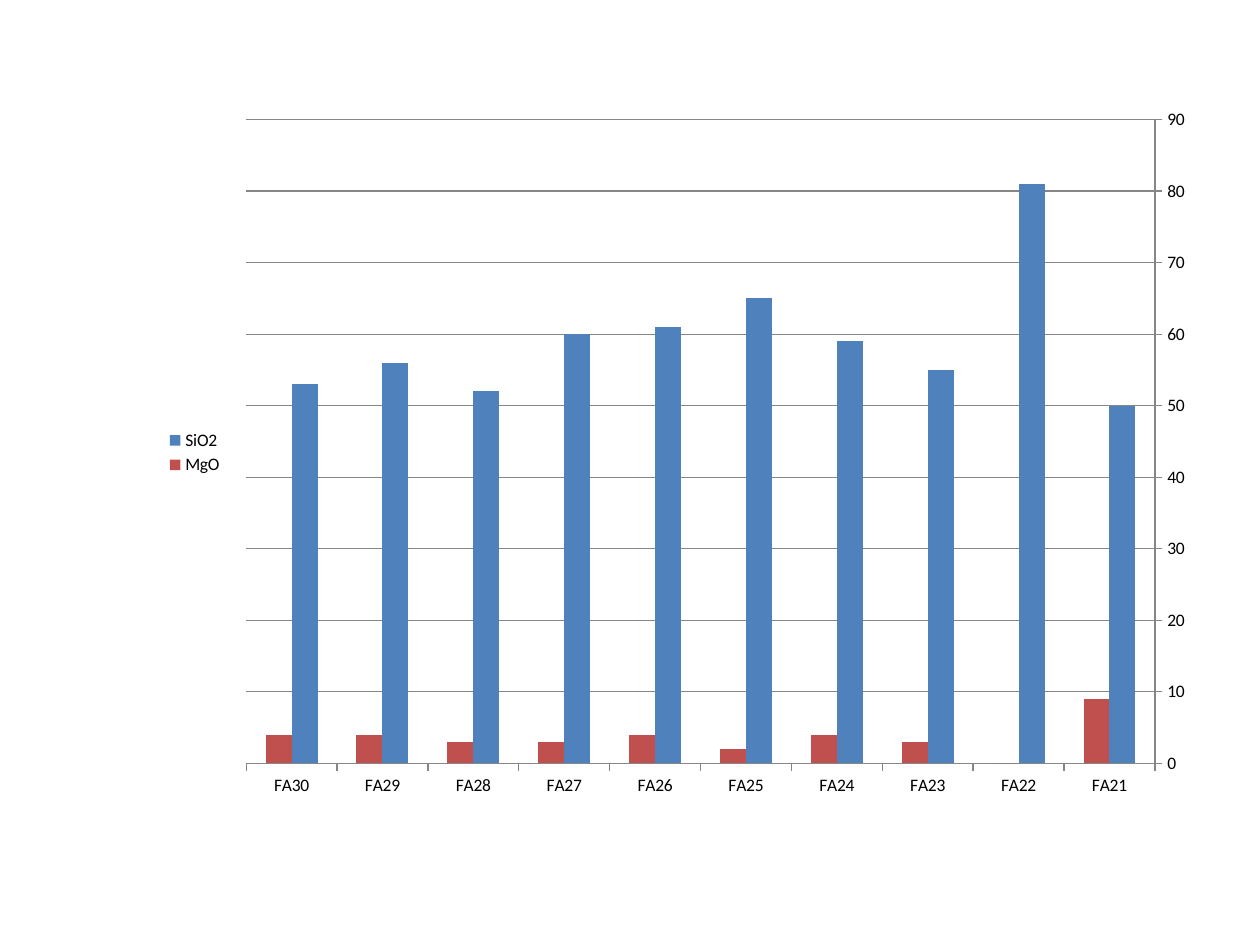
from pptx import Presentation
from pptx import util as u
from pptx.chart.data import CategoryChartData
from pptx.dml.color import RGBColor
from pptx.enum import chart as charts

BLACK = RGBColor(0x00, 0x00, 0x00)
GRAY = RGBColor(0x86, 0x86, 0x86)
BLUE = RGBColor(0x4F, 0x81, 0xBD)
RED = RGBColor(0xC0, 0x50, 0x4D)
WIDTH, HEIGHT = u.Inches(10), u.Inches(7.5)

SAMPLES = [f"FA{number}" for number in range(21, 31)]
OXIDES = {
    "SiO2": (BLUE, [50, 81, 55, 59, 65, 61, 60, 52, 56, 53]),
    "MgO": (RED, [9, 0, 3, 4, 2, 4, 3, 3, 4, 4]),
}


def style_line(line):
    line.color.rgb = GRAY
    line.width = u.Pt(0.75)


def style_axis(axis):
    axis.major_tick_mark = charts.XL_TICK_MARK.OUTSIDE
    axis.minor_tick_mark = charts.XL_TICK_MARK.NONE
    style_line(axis.format.line)


def add_oxide_chart(page, box):
    """Place the column chart in box: left, top, width, height."""
    data = CategoryChartData()
    data.categories = SAMPLES
    for name, (_, values) in OXIDES.items():
        data.add_series(name, values)
    chart = page.shapes.add_chart(
        charts.XL_CHART_TYPE.COLUMN_CLUSTERED, *box, data).chart
    chart.has_title = False
    chart.font.name = "Calibri"
    chart.font.size = u.Pt(10)
    chart.font.color.rgb = BLACK

    # Columns
    plot = chart.plots[0]
    plot.gap_width = 150
    plot.overlap = 0
    plot.vary_by_categories = False
    for series, (color, _) in zip(plot.series, OXIDES.values()):
        series.format.fill.solid()
        series.format.fill.fore_color.rgb = color

    # Axes: samples run from right to left
    style_axis(chart.category_axis)
    chart.category_axis.reverse_order = True
    scale = chart.value_axis
    style_axis(scale)
    scale.minimum_scale, scale.maximum_scale = 0, 90
    scale.major_unit = 10
    scale.has_major_gridlines = True
    style_line(scale.major_gridlines.format.line)

    # Legend
    chart.has_legend = True
    chart.legend.position = charts.XL_LEGEND_POSITION.LEFT
    chart.legend.include_in_layout = False


def main():
    deck = Presentation()
    deck.slide_width, deck.slide_height = WIDTH, HEIGHT
    page = deck.slides.add_slide(deck.slide_layouts[6])
    box = (int(WIDTH * 0.122), int(HEIGHT * 0.101),
           int(WIDTH * 0.835), int(HEIGHT * 0.756))
    add_oxide_chart(page, box)
    deck.save("out.pptx")


if __name__ == "__main__":
    main()
